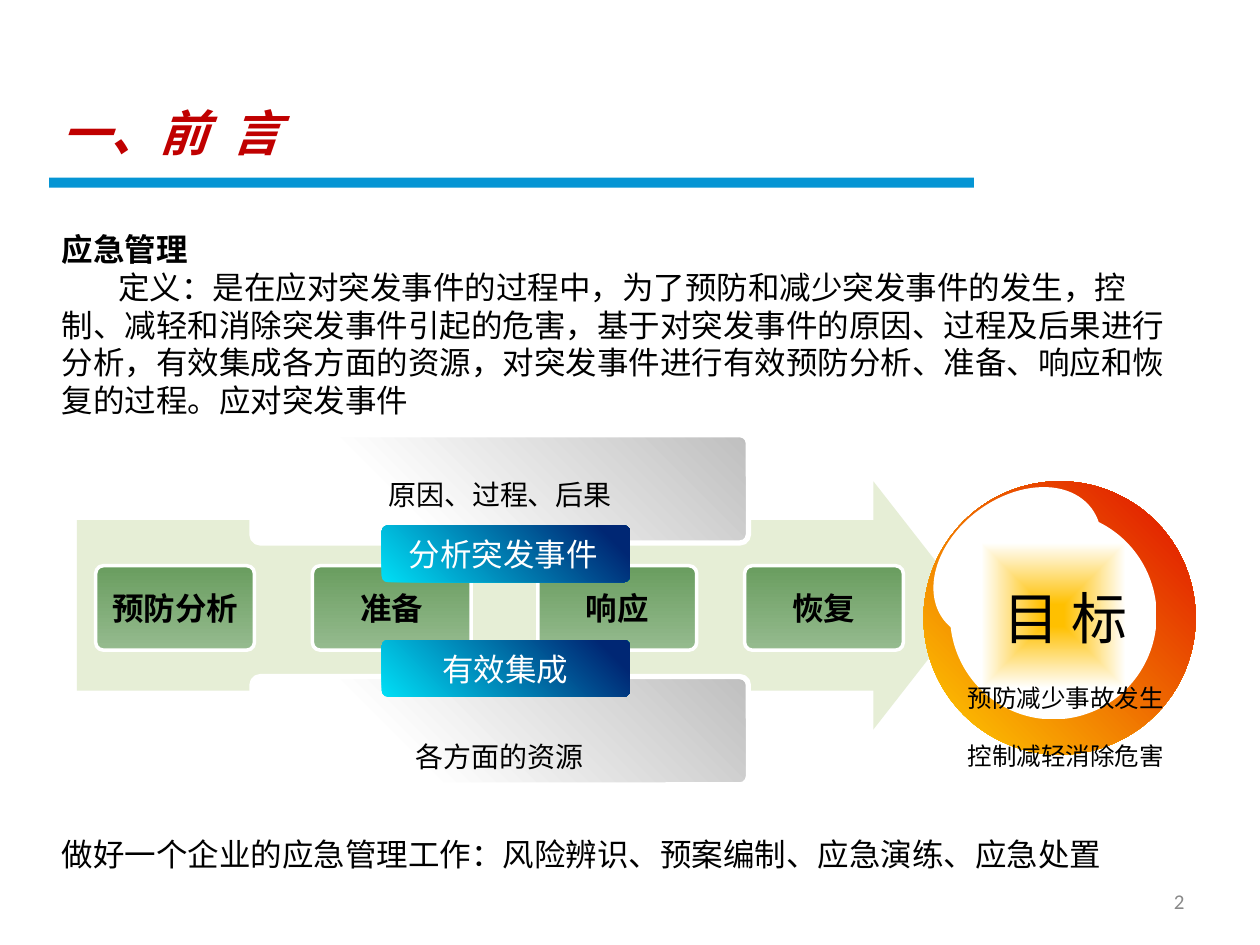
import copy
import pptx
import pptx.util
import pptx.dml.color
import pptx.enum.shapes
import pptx.enum.text
import pptx.oxml
import pptx.oxml.ns

Inches, Pt = pptx.util.Inches, pptx.util.Pt
SHAPE = pptx.enum.shapes.MSO_SHAPE
ALIGN = pptx.enum.text.PP_ALIGN
ANCHOR = pptx.enum.text.MSO_ANCHOR

THEME = {
    "font": "Noto Sans CJK SC",
    "goal_font": "Noto Sans CJK JP",
    "closing_font": "Arial",
    "number_font": "Calibri",
    "black": "000000", "white": "FFFFFF", "red": "C00000", "grey": "898989",
    "bar": "0595D4", "arrow": "D6E3BC",
    "title": 28, "body": 18, "panel": 16, "goal": 32, "note": 14, "number": 12,
    "ring": ([(0, "FFCF01"), (90, "E22000"), (100, "E22000")], 315),
    "glow": ([(0, "FFC000"), (10, "FFC000"), (70, "FFFFFF"), (100, "FFFFFF")], None),
    "stage": ([(0, "699D5F"), (100, "96BB8F")], 90),
    "sheet": ([(0, "FFFFFF"), (30, "FFFFFF"), (100, "BFBFBF")], 315),
    "label": ([(0, "00DFF6"), (90, "002774"), (100, "002774")], 315),
}


def add_figure(kind, box, fill, adjustments=(), outline=None, rotation=0):
    shape = slide.shapes.add_shape(kind, *map(Inches, box))
    shape.shadow.inherit = False
    shape.rotation = rotation
    for index, value in enumerate(adjustments):
        shape.adjustments[index] = value
    if isinstance(THEME[fill], str):
        shape.fill.solid()
        shape.fill.fore_color.rgb = pptx.dml.color.RGBColor.from_string(THEME[fill])
    else:
        stops, angle = THEME[fill]
        stop_xml = "".join(
            f'<a:gs pos="{position * 1000}"><a:srgbClr val="{color}"/></a:gs>'
            for position, color in stops)
        direction = (
            '<a:path path="rect"><a:fillToRect l="50000" t="50000" r="50000" b="50000"/></a:path>'
            if angle is None else f'<a:lin ang="{angle * 60000}" scaled="0"/>')
        shape.fill.gradient()
        properties = shape._element.spPr
        properties.replace(
            properties.find(pptx.oxml.ns.qn("a:gradFill")),
            pptx.oxml.parse_xml(
                f'<a:gradFill {pptx.oxml.ns.nsdecls("a")} rotWithShape="1">'
                f'<a:gsLst>{stop_xml}</a:gsLst>{direction}</a:gradFill>'))
    if outline:
        shape.line.color.rgb = pptx.dml.color.RGBColor.from_string(THEME["white"])
        shape.line.width = Pt(outline)
    else:
        shape.line.fill.background()
    return shape


def write(target, lines, size, color="black", font="font", anchor=ANCHOR.TOP,
          wrap=True, style=None, layout=None):
    if isinstance(target, tuple):
        target = slide.shapes.add_textbox(*map(Inches, target))
    frame = target.text_frame
    frame.word_wrap = wrap
    frame.vertical_anchor = anchor
    frame.text = "\n".join(lines)
    run_format = {"size": Pt(THEME[size]), "name": THEME[font], **(style or {})}
    east_asian = THEME["font"] if font == "closing_font" else THEME[font]
    for paragraph in frame.paragraphs:
        for name, value in (layout or {}).items():
            setattr(paragraph, name, value)
        for run in paragraph.runs:
            for name, value in run_format.items():
                setattr(run.font, name, value)
            run.font.color.rgb = pptx.dml.color.RGBColor.from_string(THEME[color])
            run._r.get_or_add_rPr().append(pptx.oxml.parse_xml(
                f'<a:ea {pptx.oxml.ns.nsdecls("a")} typeface="{east_asian}"/>'))
    return frame


presentation = pptx.Presentation()
presentation.slide_width = Inches(10)
presentation.slide_height = Inches(7.5)
slide = presentation.slides.add_slide(presentation.slide_layouts[6])

add_figure(SHAPE.RECTANGLE, (0.39, 1.41, 7.34, 0.08), "bar")
arrow = add_figure(SHAPE.RIGHT_ARROW, (0.61, 3.82, 7.09, 1.97), "arrow", (0.686, 0.39))
arrow_color = arrow._element.spPr.find(".//" + pptx.oxml.ns.qn("a:srgbClr"))
arrow_color.append(pptx.oxml.parse_xml(
    f'<a:alpha {pptx.oxml.ns.nsdecls("a")} val="60000"/>'))

definition = write(
    (0.39, 1.62, 8.95, 1.75),
    ["应急管理",
     "定义：是在应对突发事件的过程中，为了预防和减少突发事件的发生，控制、减轻和消除突发事件引起的危害，"
     "基于对突发事件的原因、过程及后果进行分析，有效集成各方面的资源，对突发事件进行有效预防分析、准备、"
     "响应和恢复的过程。应对突发事件"],
    "body", layout={"line_spacing": Pt(21.6)})
heading, explanation = definition.paragraphs
heading.line_spacing = Pt(32.8)
heading.runs[0].font.bold = True
for name, value in {"indent": str(Inches(0.45)), "hangingPunct": "0"}.items():
    explanation._p.get_or_add_pPr().set(name, value)

title = write((0.39, 0.62, 4.38, 0.86), ["一、前"], "title", "red", anchor=ANCHOR.MIDDLE,
              style={"bold": True, "italic": True}).paragraphs[0]
for text, spacing in ((" ", 680), ("言", 0)):
    title._p.append(copy.deepcopy(title.runs[0]._r))
    title.runs[-1].text = text
    title.runs[-1]._r.get_or_add_rPr().set("spc", str(spacing))

add_figure(SHAPE.OVAL, (7.33, 3.82, 2.16, 2.17), "ring")
add_figure(SHAPE.OVAL, (7.34, 3.95, 1.47, 1.05), "white", rotation=323.1)
add_figure(SHAPE.OVAL, (7.54, 4.06, 1.64, 1.65), "glow")
write((7.64, 4.57, 1.41, 0.64), ["目 标"], "goal", font="goal_font",
      layout={"alignment": ALIGN.RIGHT, "line_spacing": Pt(39.2)})

for left, stage in ((0.76, "预防分析"), (2.48, "准备"), (4.27, "响应"), (5.91, "恢复")):
    box = add_figure(SHAPE.ROUNDED_RECTANGLE, (left, 4.49, 1.26, 0.67), "stage", (0.091,), 2)
    write(box, [stage], "body", anchor=ANCHOR.MIDDLE, wrap=False,
          style={"bold": True}, layout={"alignment": ALIGN.CENTER})

for top, text_box, caption, spacing in (
        (5.37, (2.14, 5.55, 3.65, 0.56), "各方面的资源", 38.8),
        (3.45, (2.04, 3.61, 3.86, 0.33), "原因、过程、后果", 28.8)):
    add_figure(SHAPE.ROUNDED_RECTANGLE, (2, top, 3.94, 0.86), "sheet", (0.078,), 3)
    write(text_box, [caption], "panel",
          layout={"alignment": ALIGN.CENTER, "line_spacing": Pt(spacing)})

for top, left, width, label in ((4.17, 3.1, 1.79, "分析突发事件"), (5.08, 3.13, 1.76, "有效集成")):
    add_figure(SHAPE.ROUNDED_RECTANGLE, (3.03, top, 1.97, 0.45), "label", (0.106,))
    write((left, top + 0.08, width, 0.3), [label], "body", "white", anchor=ANCHOR.MIDDLE,
          layout={"alignment": ALIGN.CENTER})

write((7.58, 5.37, 1.91, 0.8), ["预防减少事故发生", "控制减轻消除危害"], "note",
      layout={"line_spacing": Pt(16.8), "space_after": Pt(16.2)})
write((0.39, 6.58, 8.45, 0.4),
      ["做好一个企业的应急管理工作：风险辨识、预案编制、应急演练、应急处置"],
      "body", font="closing_font", wrap=False, layout={"line_spacing": Pt(21.4)})
write((7.17, 6.95, 2.33, 0.4), ["2"], "number", "grey", "number_font", ANCHOR.MIDDLE,
      layout={"alignment": ALIGN.RIGHT})

presentation.save("out.pptx")
